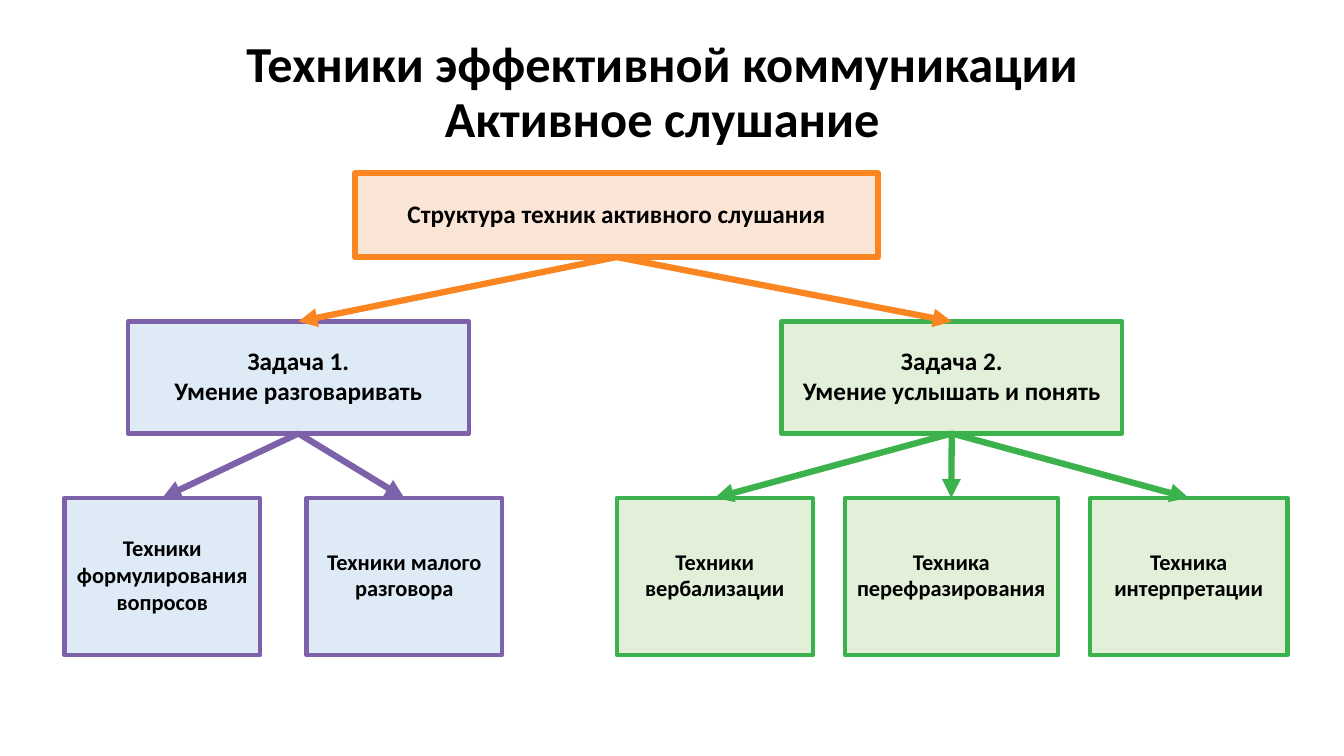
"""Build a slide with the tree of active listening techniques."""
from copy import deepcopy

from lxml.etree import SubElement
from pptx import Presentation
from pptx.dml.color import RGBColor
from pptx.enum.shapes import MSO_CONNECTOR, MSO_SHAPE
from pptx.enum.text import MSO_ANCHOR, MSO_AUTO_SIZE, PP_ALIGN
from pptx.oxml.ns import qn
from pptx.util import Inches, Pt

ORANGE, VIOLET, GREEN = "FB8520", "7D62AA", "3BB24C"
FILLS = {ORANGE: "FBE5D6", VIOLET: "DEEBF7", GREEN: "E2F0D9"}


def color(hex_code):
    return RGBColor.from_string(hex_code)


def write_text(text_frame, text, size, line_spacing=None):
    text_frame.word_wrap = True
    text_frame.auto_size = MSO_AUTO_SIZE.NONE
    text_frame.vertical_anchor = MSO_ANCHOR.MIDDLE
    text_frame.text = text
    for paragraph in text_frame.paragraphs:
        paragraph.alignment = PP_ALIGN.CENTER
        paragraph.line_spacing = line_spacing
        for run in paragraph.runs:
            run.font.name = "Calibri"
            run.font.size = Pt(size)
            run.font.bold = True
            run.font.color.rgb = color("000000")


presentation = Presentation()
presentation.slide_width = Inches(13.33)
presentation.slide_height = Inches(7.5)
slide = presentation.slides.add_slide(presentation.slide_layouts[5])

title = slide.shapes.title
title.left, title.top = Inches(0.82), Inches(0.43)
title.width, title.height = Inches(11.5), Inches(1)
write_text(title.text_frame, "Техники эффективной коммуникации\vАктивное слушание",
           size=36, line_spacing=0.9)
title_paragraph = title.text_frame.paragraphs[0]
title_format = title_paragraph.runs[0].font._element if hasattr(
    title_paragraph.runs[0].font, "_element") else title_paragraph.runs[0]._r.rPr
for line_break in title_paragraph._p.findall(qn("a:br")):
    line_break.insert(0, deepcopy(title_format))

levels = {
    "root": {"top": 1.72, "height": 0.83, "size": 18, "border": 4.5},
    "task": {"top": 3.19, "height": 1.11, "size": 18, "border": 3},
    "technique": {"top": 4.94, "height": 1.56, "size": 16, "border": 3},
}
boxes = [
    ("root", None, "Структура техник активного слушания", 3.52, 5.19, ORANGE),
    ("task", 0, "Задача 1.\nУмение разговаривать", 1.27, 3.38, VIOLET),
    ("task", 0, "Задача 2.\nУмение услышать и понять", 7.75, 3.38, GREEN),
    ("technique", 1, "Техники формулирования вопросов", 0.64, 1.94, VIOLET),
    ("technique", 1, "Техники малого разговора", 3.04, 1.94, VIOLET),
    ("technique", 2, "Техники вербализации", 6.12, 1.94, GREEN),
    ("technique", 2, "Техника перефразирования", 8.38, 2.11, GREEN),
    ("technique", 2, "Техника интерпретации", 10.81, 1.96, GREEN),
]

shapes = []
for level_name, parent, text, left, width, accent in boxes:
    level = levels[level_name]
    shape = slide.shapes.add_shape(
        MSO_SHAPE.FLOWCHART_PROCESS, Inches(left), Inches(level["top"]),
        Inches(width), Inches(level["height"]))
    shape.shadow.inherit = False
    shape.fill.solid()
    shape.fill.fore_color.rgb = color(FILLS[accent])
    shape.line.color.rgb = color(accent)
    shape.line.width = Pt(level["border"])
    text_frame = shape.text_frame
    text_frame.margin_left = text_frame.margin_right = Inches(0.08)
    text_frame.margin_top, text_frame.margin_bottom = 0, Inches(0.04)
    write_text(text_frame, text, size=level["size"])
    shapes.append(shape)

for child, (level_name, parent, *details) in zip(shapes, boxes):
    if parent is None:
        continue
    arrow = slide.shapes.add_connector(MSO_CONNECTOR.STRAIGHT, 0, 0, 0, 0)
    arrow.begin_connect(shapes[parent], 2)
    arrow.end_connect(child, 0)
    arrow.line.color.rgb = color(boxes[parent][-1])
    arrow.line.width = Pt(4.5)
    SubElement(arrow.line._get_or_add_ln(), qn("a:tailEnd"), type="triangle")
    SubElement(arrow._element.spPr, qn("a:effectLst"))

presentation.save("out.pptx")
